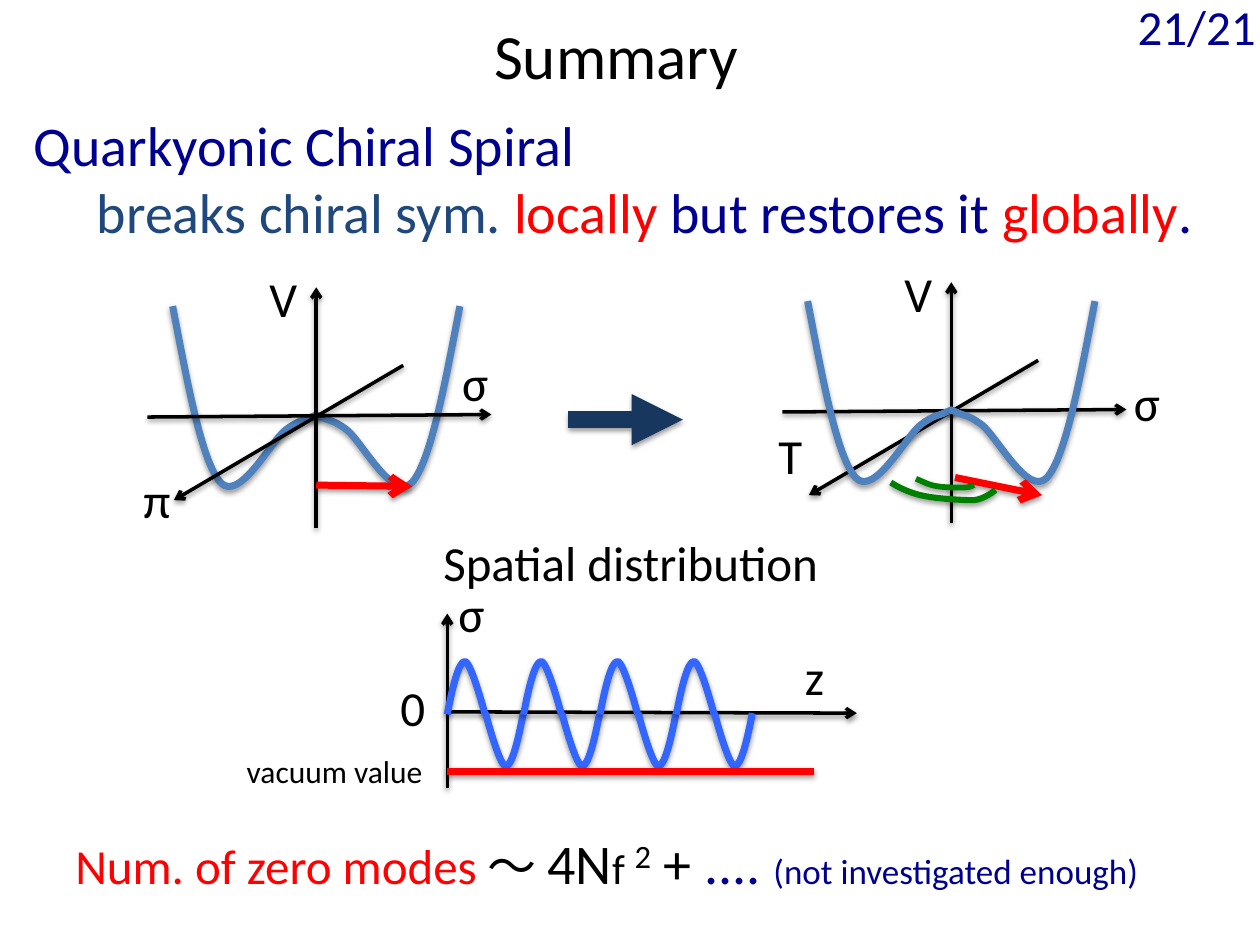
from dataclasses import dataclass

from lxml import etree
from pptx import Presentation
from pptx.dml.color import RGBColor
from pptx.enum.shapes import MSO_CONNECTOR
from pptx.enum.text import MSO_AUTO_SIZE, PP_ALIGN
from pptx.oxml.ns import qn
from pptx.util import Inches, Pt

STRAIGHT = MSO_CONNECTOR.STRAIGHT
GROW = MSO_AUTO_SIZE.SHAPE_TO_FIT_TEXT
LEFT, CENTER = PP_ALIGN.LEFT, PP_ALIGN.CENTER


@dataclass(frozen=True)
class Theme:
    font: str = "Calibri"
    black: str = "000000"
    navy: str = "000090"
    slate: str = "1F497D"
    red: str = "FF0000"
    well: str = "4F81BD"
    transition: str = "17375E"
    wave: str = "3366FF"
    green: str = "008000"
    title: int = 36
    headline: int = 32
    label: int = 28
    subscript: int = 24
    note: int = 20
    small: int = 18
    axis: float = 2
    curve: float = 4


THEME = Theme()


def add_text(shapes, box, lines, align=LEFT):
    textbox = shapes.add_textbox(*map(Inches, box))
    frame = textbox.text_frame
    frame.word_wrap = True
    frame.auto_size = GROW
    for index, pieces in enumerate(lines):
        paragraph = frame.paragraphs[0] if index == 0 else frame.add_paragraph()
        paragraph.alignment = align
        for text, size, color in pieces:
            run = paragraph.add_run()
            run.text = text
            run.font.name = THEME.font
            run.font.size = Pt(size)
            run.font.color.rgb = RGBColor.from_string(color)
    return frame


def add_label(shapes, text, left, top, width=0.84, size=THEME.label):
    add_text(shapes, (left, top, width, 0.57), [[(text, size, THEME.black)]])


def style_stroke(shape, color, weight, arrowhead=None):
    shape.line.color.rgb = RGBColor.from_string(color)
    shape.line.width = Pt(weight)
    properties = shape._element.spPr
    if arrowhead:
        etree.SubElement(properties.find(qn("a:ln")), qn("a:tailEnd"), type=arrowhead)
    effects = etree.SubElement(properties, qn("a:effectLst"))
    shadow = etree.SubElement(effects, qn("a:outerShdw"), blurRad=str(Pt(3.1)),
                              dist=str(Pt(1.6)), dir="5400000", rotWithShape="0")
    shade = etree.SubElement(shadow, qn("a:srgbClr"), val=THEME.black)
    etree.SubElement(shade, qn("a:alpha"), val="38000")


def add_line(shapes, start, end, color=THEME.black, weight=THEME.axis, arrowhead="arrow"):
    line = shapes.add_connector(STRAIGHT, *map(Inches, (*start, *end)))
    style_stroke(line, color, weight, arrowhead)


def add_curve(shapes, points, color, weight=THEME.curve):
    start, *rest = [(Inches(x), Inches(y)) for x, y in points]
    builder = shapes.build_freeform(*start)
    builder.add_line_segments(rest, close=False)
    curve = builder.convert_to_shape()
    segments = list(curve._element.iter(qn("a:lnTo")))
    outline = segments[0].getparent()
    for first in range(0, len(segments), 3):
        bezier = etree.SubElement(outline, qn("a:cubicBezTo"))
        for segment in segments[first:first + 3]:
            bezier.append(segment[0])
            outline.remove(segment)
    curve.fill.background()
    style_stroke(curve, color, weight)
    return curve


def shift(points, left, top):
    return [(left + x, top + y) for x, y in points]


def draw_axes(shapes, left, top):
    for axis in (((0.13, 1.23), (2.86, 1.21)),
                 ((2.16, 0.82), (0.34, 1.89)),
                 ((1.47, 2.11), (1.47, 0.2))):
        add_line(shapes, *shift(axis, left, top))
    add_label(shapes, "V", left + 1, top, 0.89)


def draw_wells(shapes, left, top):
    half = [(0.33, 0.35), (0.45, 0.97), (0.56, 1.58), (0.71, 1.75),
            (0.86, 1.91), (1.11, 1.42), (1.23, 1.33),
            (1.34, 1.25), (1.37, 1.26), (1.41, 1.24),
            (1.45, 1.22), (1.47, 1.22), (1.48, 1.21)]
    mirrored = [(2.94 - x, y) for x, y in half]
    for side in (half, mirrored):
        add_curve(shapes, shift(side, left, top), THEME.well)


def draw_broken_potential(slide, left, top):
    shapes = slide.shapes.add_group_shape().shapes
    add_label(shapes, "σ", left + 2.53, top + 0.67)
    draw_wells(shapes, left, top)
    draw_axes(shapes, left, top)
    add_line(shapes, *shift([(1.47, 1.77), (2.23, 1.78)], left, top), THEME.red, THEME.curve)
    add_label(shapes, "π", left, top + 1.6)


def draw_rotating_potential(slide, left, top):
    shapes = slide.shapes.add_group_shape().shapes
    draw_axes(shapes, left, top)
    add_label(shapes, "σ", left + 2.82, top + 0.87)
    add_label(shapes, "T", left, top + 1.29)
    draw_wells(shapes, left, top)
    add_line(shapes, *shift([(1.5, 1.75), (2.19, 1.89)], left, top), THEME.red, THEME.curve)
    inner = [(1.19, 1.76), (1.24, 1.78), (1.29, 1.81), (1.36, 1.82), (1.42, 1.83),
             (1.52, 1.83), (1.57, 1.83), (1.62, 1.83), (1.65, 1.81), (1.65, 1.81)]
    outer = [(0.99, 1.79), (1.07, 1.84), (1.16, 1.88), (1.27, 1.9), (1.38, 1.92),
             (1.56, 1.93), (1.65, 1.93), (1.74, 1.92), (1.82, 1.85), (1.82, 1.85)]
    add_curve(shapes, shift(inner, left, top), THEME.green, 3.25)
    add_curve(shapes, shift(outer, left, top), THEME.green, 3.5)


def draw_spatial_distribution(slide, left, top):
    shapes = slide.shapes
    add_label(shapes, "vacuum value", left, top + 1.74, 1.97, THEME.small)
    add_label(shapes, "Spatial distribution", left + 1.56, top, 3.77)
    origin = left + 1.69
    add_line(shapes, (origin + 0.03, top + 1.47), (origin + 3.25, top + 1.48))
    add_label(shapes, "0", left + 1.22, top + 1.15)
    add_line(shapes, (origin, top + 2.07), (origin, top + 0.69))
    wave = shapes.add_group_shape().shapes
    crest = [(0, 0.42), (0.04, 0.21), (0.09, 0), (0.14, 0), (0.19, 0), (0.3, 0.42), (0.3, 0.42)]
    for index in range(8):
        is_trough = index % 2
        swing = shift(crest, origin + 0.303 * index, top + 1.07 + 0.41 * is_trough)
        add_curve(wave, swing, THEME.wave).rotation = 180 * is_trough
    add_line(shapes, (origin, top + 1.94), (origin + 2.91, top + 1.94),
             THEME.red, THEME.curve, None)
    add_label(shapes, "z", left + 4.43, top + 0.9)
    add_label(shapes, "σ", left + 1.68, top + 0.4)


def draw_statement(slide, box):
    size = THEME.headline
    frame = add_text(slide.shapes, box, [
        [("Quarkyonic Chiral Spiral", size, THEME.navy)],
        [("breaks chiral sym. ", size, THEME.slate), ("locally ", size, THEME.red),
         ("but restores it ", size, THEME.navy), ("globally", size, THEME.red),
         (".", size, THEME.navy)]])
    frame.paragraphs[1]._p.get_or_add_pPr().set("marL", str(Inches(0.5)))


def draw_zero_modes(slide, box):
    frame = add_text(slide.shapes, box, [[
        ("Num. of zero modes ", THEME.label, THEME.red),
        ("〜 ", THEME.label, THEME.black),
        ("4N", THEME.headline, THEME.black),
        ("f ", THEME.subscript, THEME.black),
        ("2", THEME.headline, THEME.black),
        (" +", THEME.headline, THEME.black),
        (" .... ", THEME.headline, THEME.navy),
        ("(not investigated enough)", THEME.note, THEME.navy)]])
    exponent = frame.paragraphs[0].runs[4]
    exponent.font._element.set("baseline", "30000")


def main():
    deck = Presentation()
    deck.slide_width, deck.slide_height = Inches(10), Inches(7.5)
    slide = deck.slides.add_slide(deck.slide_layouts[6])
    add_text(slide.shapes, (1.08, 0.08, 7.73, 0.71),
             [[("Summary ", THEME.title, THEME.black)]], CENTER)
    draw_broken_potential(slide, 1.04, 2.08)
    add_text(slide.shapes, (8.93, -0.08, 1.15, 0.57), [[("21/21", THEME.label, THEME.navy)]])
    add_line(slide.shapes, (4.51, 3.33), (5.42, 3.33), THEME.transition, 9.75, "triangle")
    draw_rotating_potential(slide, 6.08, 2.04)
    draw_statement(slide, (0.17, 0.83, 9.83, 1.18))
    draw_spatial_distribution(slide, 1.86, 4.18)
    draw_zero_modes(slide, (0.5, 6.53, 9, 0.64))
    deck.save("out.pptx")


if __name__ == "__main__":
    main()
